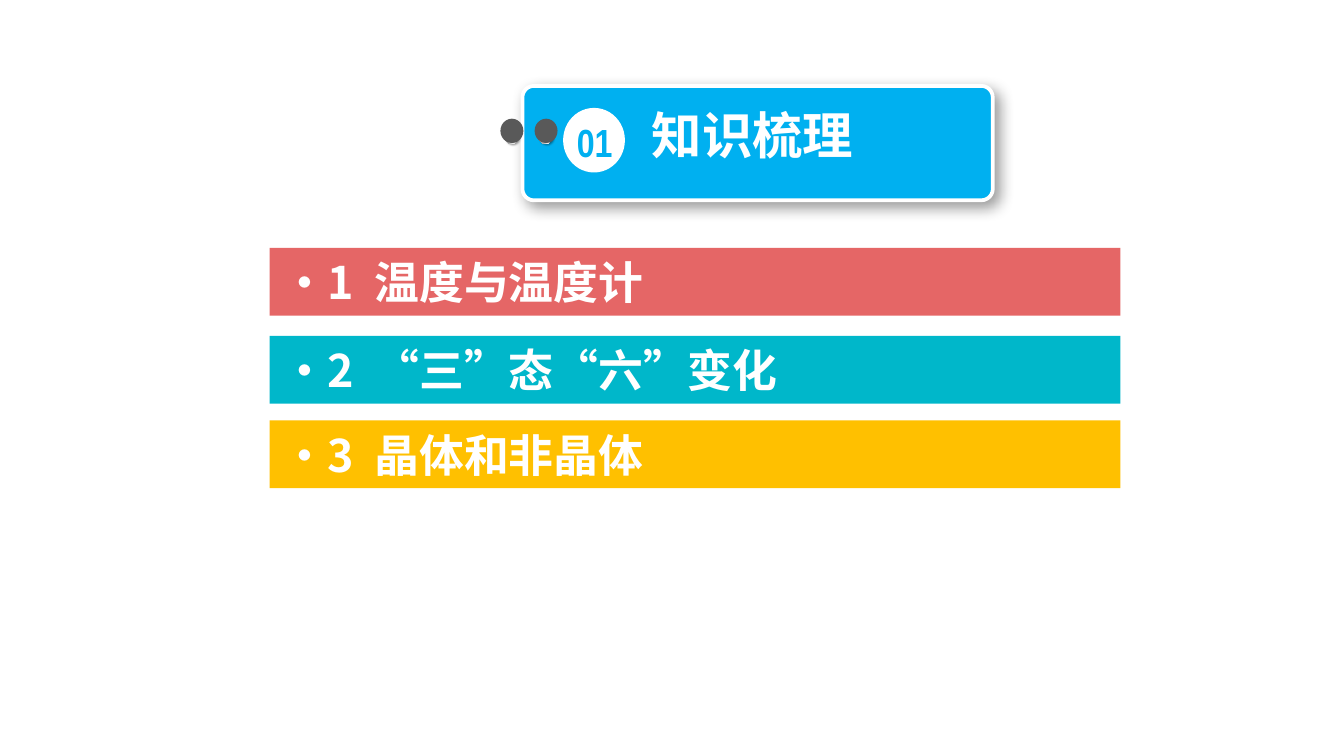
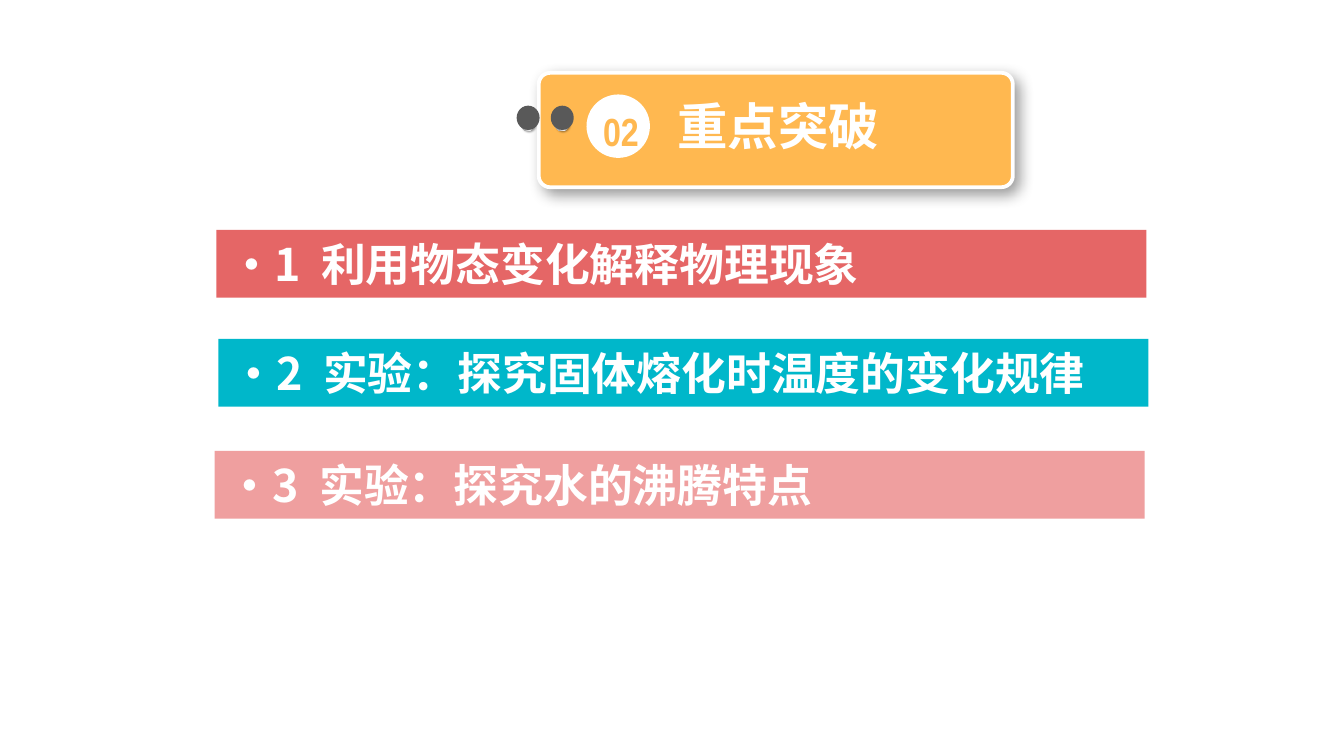
from pptx import Presentation as Deck
from pptx.dml.color import RGBColor as Rgb
from pptx.enum.shapes import MSO_SHAPE as Kind
from pptx.enum.text import MSO_ANCHOR as Anchor, MSO_AUTO_SIZE as Fit, PP_ALIGN as Align
from pptx.oxml import parse_xml
from pptx.oxml.ns import nsdecls, qn
from pptx.util import Pt

WHITE = Rgb(0xFF, 0xFF, 0xFF)
BLUE = Rgb(0x00, 0xB0, 0xF0)
AMBER = Rgb(0xFF, 0xB8, 0x50)
RED = Rgb(0xE5, 0x66, 0x66)
TEAL = Rgb(0x00, 0xB7, 0xCA)
GOLD = Rgb(0xFF, 0xC0, 0x00)
PINK = Rgb(0xEF, 0x9F, 0x9F)
GREY = Rgb(0x59, 0x59, 0x59)
SANS, SLIM = "Noto Sans CJK SC", "Arial Narrow"
STEEL = [(0, "FFFFFF"), (17, "A6A6A6"), (35, "F2F2F2"),
         (55, "A6A6A6"), (75, "F2F2F2"), (100, "A6A6A6")]

FRAME = {"word_wrap": True, "auto_size": Fit.NONE, "vertical_anchor": Anchor.MIDDLE,
         "margin_top": 0, "margin_bottom": 0, "margin_left": 0, "margin_right": 0}
HEAD = FRAME | {"margin_bottom": Pt(2)}
COUNT = FRAME | {"margin_top": Pt(3)}
ROW = FRAME | {"margin_left": Pt(7.2), "margin_right": Pt(7.2)}


def apply(item, form):
    """Set every attribute named in a format dict."""
    for key, value in form.items():
        setattr(item, key, value)


def write(para, text, size, color, face=SANS, gap=0):
    """Add one bold run, with extra letter spacing if asked."""
    run = para.add_run()
    run.text = text
    apply(run.font, {"name": face, "size": Pt(size), "bold": True})
    run.font.color.rgb = color
    props = run.font._element
    props.append(parse_xml(f'<a:ea {nsdecls("a")} typeface="{face}"/>'))
    if gap:
        props.set("spc", str(round(gap * 100)))


def draw(slide, kind, box, fill=None):
    """Add a plain shape without outline or shadow."""
    shape = slide.shapes.add_shape(kind, *map(Pt, box))
    shape.shadow.inherit = False
    shape.line.fill.background()
    if fill is None:
        shape.fill.background()
    else:
        shape.fill.solid()
        shape.fill.fore_color.rgb = fill
    return shape


def shade(shape, blur, dist):
    """Cast a soft black shadow to the lower right."""
    shape._element.spPr.find(qn("a:effectLst")).append(parse_xml(
        f'<a:outerShdw {nsdecls("a")} blurRad="{Pt(blur)}" dist="{Pt(dist)}" '
        'dir="2700000" algn="tl" rotWithShape="0"><a:srgbClr val="000000">'
        '<a:alpha val="40000"/></a:srgbClr></a:outerShdw>'))


def add_pin(slide, left, top):
    """Add a grey pin over its steel rim."""
    rim = draw(slide, Kind.OVAL, (left + 2.3, top + 6.3, 7.2, 7.2))
    rim.rotation = 270
    stops = "".join(f'<a:gs pos="{pos * 1000}"><a:srgbClr val="{tone}"/></a:gs>'
                    for pos, tone in STEEL)
    props = rim._element.spPr
    props.replace(props.find(qn("a:noFill")), parse_xml(
        f'<a:gradFill {nsdecls("a")}><a:gsLst>{stops}</a:gsLst>'
        '<a:lin ang="2700000" scaled="0"/></a:gradFill>'))
    shade(rim, 1, 1)
    draw(slide, Kind.OVAL, (left, top, 12.3, 13), GREY)


def add_plate(slide, box, color):
    """Add the rounded title plate with its two pins."""
    plate = draw(slide, Kind.ROUNDED_RECTANGLE, box, color)
    plate.adjustments[0] = 0.1
    plate.line.color.rgb = WHITE
    plate.line.width = Pt(2)
    shade(plate, 8, 4)
    for shift in (6.5, -11.8):
        add_pin(slide, box[0] + shift, box[1] + 17.6)


def add_badge(slide, disc, box, text, color):
    """Add the white disc with the section number."""
    draw(slide, Kind.OVAL, disc, WHITE)
    frame = slide.shapes.add_textbox(*map(Pt, box)).text_frame
    apply(frame, COUNT)
    para = frame.paragraphs[0]
    para.alignment = Align.CENTER
    write(para, text, 21, color, SLIM)


def set_title(slide, box, text):
    """Place the title in front of its plate."""
    title = slide.shapes.title
    apply(title, dict(zip(("left", "top", "width", "height"), map(Pt, box))))
    slide.shapes._spTree.append(title._element)
    apply(title.text_frame, HEAD)
    para = title.text_frame.paragraphs[0]
    apply(para, {"alignment": Align.CENTER, "line_spacing": 1.0, "space_before": Pt(0)})
    write(para, text, 27, WHITE)


def add_bar(slide, num, text, left, top, width, color):
    """Add one numbered topic bar."""
    frame = draw(slide, Kind.RECTANGLE, (left, top, width, 36.3), color).text_frame
    apply(frame, ROW)
    para = frame.paragraphs[0]
    para.alignment = Align.LEFT
    write(para, f"·{num}", 24, WHITE)
    write(para, " ", 24, WHITE, gap=5.4)
    write(para, text, 24, WHITE)


def add_part(deck, num, name, color, plate, disc, count, head, width, bars):
    """Build one section slide."""
    slide = deck.slides.add_slide(deck.slide_layouts[5])
    add_plate(slide, plate, color)
    add_badge(slide, disc, count, num, color)
    set_title(slide, head, name)
    for place, (text, left, top, tone) in enumerate(bars, 1):
        add_bar(slide, place, text, left, top, width, tone)


def main():
    """Build and save the deck."""
    deck = Deck()
    apply(deck, {"slide_width": Pt(720), "slide_height": Pt(405)})
    add_part(deck, "01", "知识梳理", BLUE,
             plate=(279.9, 46, 252, 61.3), disc=(301.7, 57.8, 33.1, 34.6),
             count=(299.5, 58.3, 38.2, 32.4), head=(323.3, 52.6, 159.8, 40.3),
             width=455.8, bars=[
                 ("温度与温度计", 144.5, 132.8, RED),
                 ("“三”态“六”变化", 144.5, 180, TEAL),
                 ("晶体和非晶体", 144.5, 225.2, GOLD)])
    add_part(deck, "02", "重点突破", AMBER,
             plate=(288.6, 39, 254, 61.3), disc=(314.2, 50.6, 34, 34),
             count=(312.5, 52.6, 40.3, 32.4), head=(327.6, 48.2, 178.6, 40.3),
             width=498.2, bars=[
                 ("利用物态变化解释物理现象", 115.9, 123.2, RED),
                 ("实验：探究固体熔化时温度的变化规律", 117, 181.6, TEAL),
                 ("实验：探究水的沸腾特点", 115, 241.5, PINK)])
    deck.save("out.pptx")


if __name__ == "__main__":
    main()
